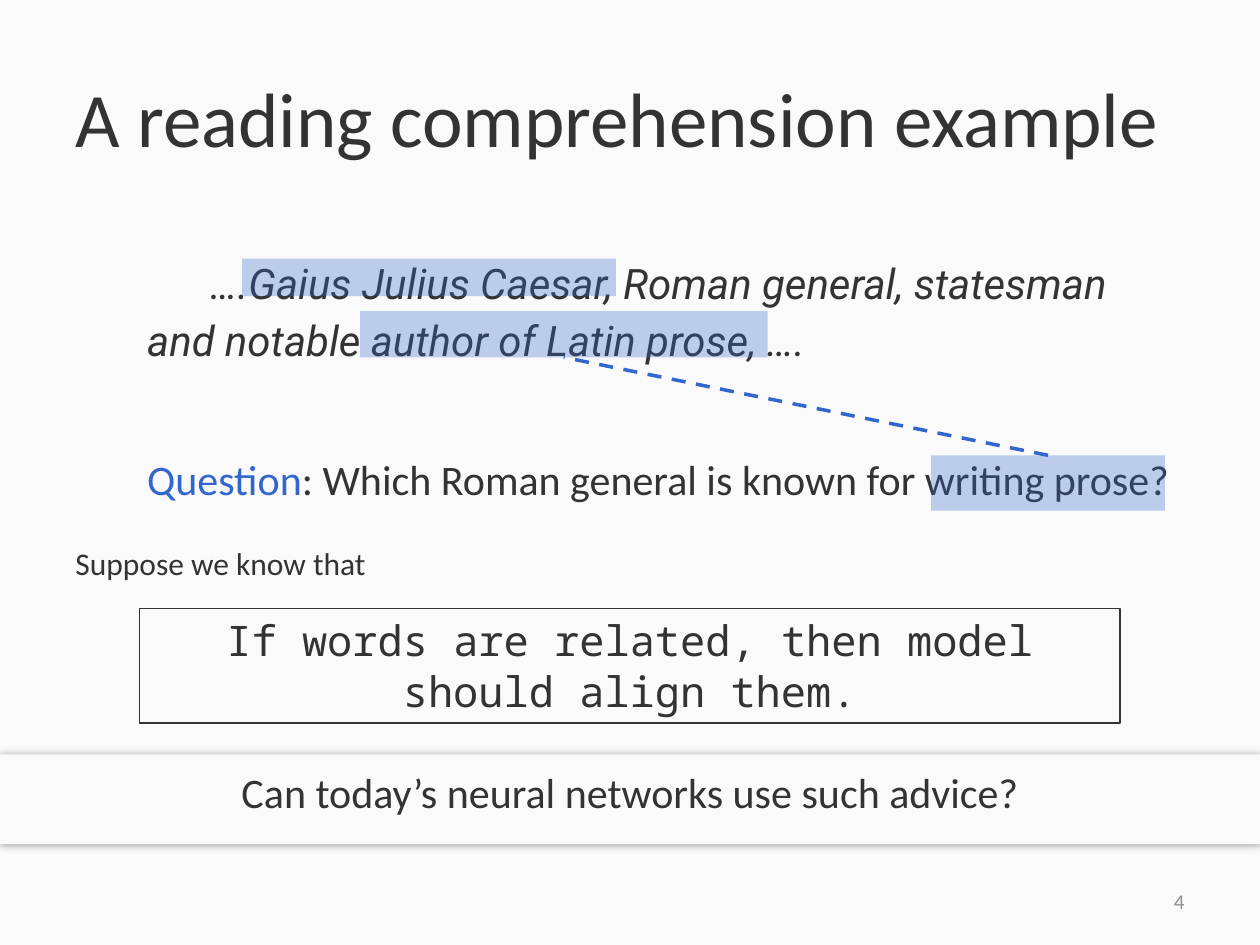
from lxml import etree
from pptx import Presentation
from pptx.dml.color import RGBColor
from pptx.enum.dml import MSO_LINE
from pptx.enum.shapes import MSO_CONNECTOR, MSO_SHAPE
from pptx.enum.text import MSO_ANCHOR, PP_ALIGN
from pptx.oxml.ns import qn
from pptx.util import Pt

RECT = MSO_SHAPE.RECTANGLE
STRAIGHT = MSO_CONNECTOR.STRAIGHT
DASH = MSO_LINE.DASH
TOP, MIDDLE = MSO_ANCHOR.TOP, MSO_ANCHOR.MIDDLE
LEFT, CENTER, RIGHT = PP_ALIGN.LEFT, PP_ALIGN.CENTER, PP_ALIGN.RIGHT
SIDE_TOP, SIDE_BOTTOM = 0, 2

COLORS = {"paper": "FAFAFA", "ink": "333333", "blue": "3366CC",
          "grey": "909090", "shadow": "000000"}


def rgb(name):
    return RGBColor.from_string(COLORS[name])


class SlideBuilder:
    """Holds the style and the slide being filled."""

    font = "Calibri"
    size = 24

    def __init__(self, slide):
        self.s = slide
        fill = slide.background.fill
        fill.solid()
        fill.fore_color.rgb = rgb("paper")

    def add_runs(self, shape, runs, size=None, font=None, italic=False,
                 align=LEFT, anchor=TOP, wrap=True):
        """Fill a shape with one paragraph of (text, colour) runs."""
        tf = shape.text_frame
        tf.word_wrap = wrap
        tf.vertical_anchor = anchor
        p = tf.paragraphs[0]
        p.alignment = align
        for text, color in runs:
            r = p.add_run()
            r.text = text
            r.font.name = font or self.font
            r.font.size = Pt(size or self.size)
            r.font.italic = italic
            r.font.color.rgb = rgb(color)
        return p

    def text(self, box, runs, **style):
        sp = self.s.shapes.add_textbox(*map(Pt, box))
        return self.add_runs(sp, runs, **style)

    def rect(self, box, fill=None, line=None):
        sp = self.s.shapes.add_shape(RECT, *map(Pt, box))
        sp.shadow.inherit = False
        if fill:
            sp.fill.solid()
            sp.fill.fore_color.rgb = rgb(fill)
        else:
            sp.fill.background()
        if line:
            sp.line.color.rgb = rgb(line)
            sp.line.width = Pt(0.75)
        else:
            sp.line.fill.background()
        return sp

    def highlight(self, box):
        """Translucent marker over words."""
        sp = self.rect(box, fill="blue")
        clr = sp._element.spPr.find(qn("a:solidFill"))[0]
        etree.SubElement(clr, qn("a:alpha"), val="31000")
        return sp

    def banner(self, box, runs):
        """Full-width band with a soft shadow all round."""
        sp = self.rect(box, fill="paper")
        effects = sp._element.spPr.find(qn("a:effectLst"))
        shadow = etree.SubElement(effects, qn("a:outerShdw"),
                                  blurRad=str(Pt(5)), dist="0", dir="0")
        clr = etree.SubElement(shadow, qn("a:srgbClr"), val=COLORS["shadow"])
        etree.SubElement(clr, qn("a:alpha"), val="40000")
        tf = sp.text_frame
        tf.margin_top = tf.margin_bottom = Pt(7.2)
        self.add_runs(sp, runs, align=CENTER)

    def link(self, start, end):
        """Dashed line from the top of one rectangle to the bottom of another."""
        c = self.s.shapes.add_connector(STRAIGHT, 0, 0, 0, 0)
        c.begin_connect(start, SIDE_TOP)
        c.end_connect(end, SIDE_BOTTOM)
        c.line.color.rgb = rgb("blue")
        c.line.width = Pt(2)
        c.line.dash_style = DASH
        etree.SubElement(c._element.spPr, qn("a:effectLst"))


def main():
    prs = Presentation()
    prs.slide_width, prs.slide_height = Pt(720), Pt(540)
    b = SlideBuilder(prs.slides.add_slide(prs.slide_layouts[6]))

    # Title and slide number
    b.text((36, 21.6, 648, 90), [("A reading comprehension example", "ink")],
           size=44, anchor=MIDDLE)
    b.text((516, 500.5, 168, 28.8), [("4", "grey")],
           size=12, align=RIGHT, anchor=MIDDLE)

    # Passage, with an indented first line
    p = b.text((77, 139, 588, 74),
               [("….Gaius Julius Caesar, Roman general, statesman and notable "
                 "author of Latin prose, ….", "ink")],
               font="Roboto", italic=True)
    p.line_spacing = 1.15
    p.space_after = Pt(16)
    p._p.get_or_add_pPr().set("indent", str(Pt(36)))

    # Question
    p = b.text((77, 255.6, 607, 36),
               [("Question", "blue"),
                (": Which Roman general is known for writing prose?", "ink")],
               wrap=False)
    p.space_before = Pt(16)

    # Related phrases and the link between them
    author = b.highlight((205.8, 177.8, 232.8, 26.4))
    writing = b.highlight((532, 260.2, 133.7, 31.6))
    b.link(writing, author)

    # Advice
    b.text((36, 307.5, 182, 28.8), [("Suppose we know that", "ink")],
           size=18, wrap=False)
    b.banner((0, 431, 720, 51.4),
             [("Can today’s neural networks use such advice?", "ink")])
    advice = b.rect((79.6, 347.8, 560.4, 65.4), line="ink")
    b.add_runs(advice,
               [("If words are related, then model should align them.", "ink")],
               font="Noto Sans Mono", align=CENTER)

    # Answer
    b.highlight((138.4, 147.8, 213.6, 21.4))

    prs.save("out.pptx")


if __name__ == "__main__":
    main()
